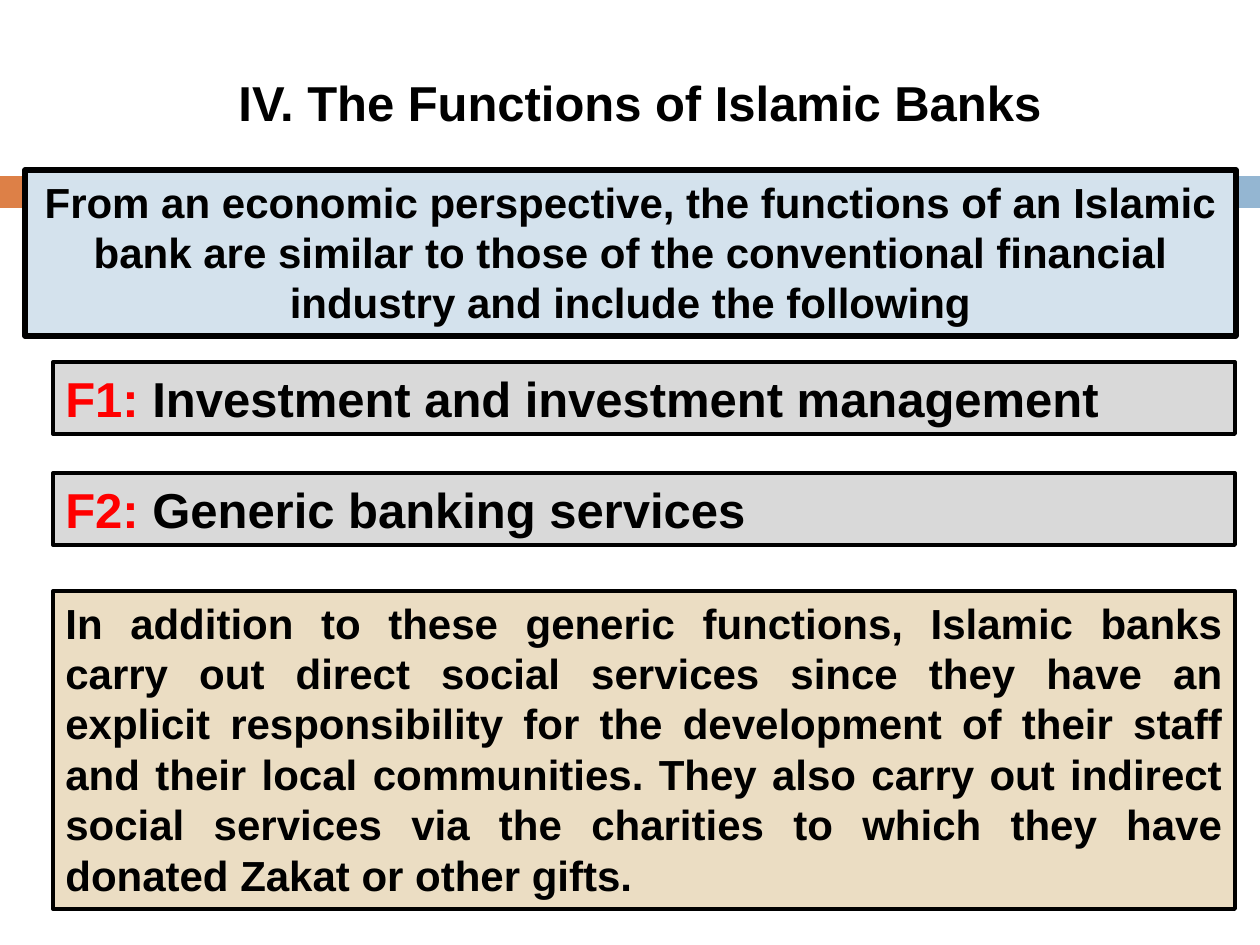
from pptx import Presentation
from pptx.dml.color import RGBColor
from pptx.enum.shapes import MSO_SHAPE
from pptx.enum.text import MSO_ANCHOR, PP_ALIGN
from pptx.util import Emu, Pt

RECTANGLE = MSO_SHAPE.RECTANGLE
TOP, MIDDLE = MSO_ANCHOR.TOP, MSO_ANCHOR.MIDDLE
LEFT, CENTER, JUSTIFY = PP_ALIGN.LEFT, PP_ALIGN.CENTER, PP_ALIGN.JUSTIFY
TITLE_ONLY = 5
EMU_PER_PX = 914400 // 126
BLACK, RED, GRAY = "000000", "FF0000", "D9D9D9"
ORANGE, BLUE, PALE_BLUE, SAND = "DD8047", "94B6D2", "D4E2ED", "EBDDC3"

INTRO = (
    "From an economic perspective, the functions of an Islamic bank are similar "
    "to those of the conventional financial industry and include the following"
)
SOCIAL_ROLE = (
    "In addition to these generic functions, Islamic banks carry out direct social "
    "services since they have an explicit responsibility for the development of "
    "their staff and their local communities. They also carry out indirect social "
    "services via the charities to which they have donated Zakat or other gifts."
)
FUNCTIONS = [
    ("F1: ", "Investment and investment management", 362, JUSTIFY),
    ("F2: ", "Generic banking services", 473, LEFT),
]


def px(length):
    """Turn a length in px into EMU."""
    return Emu(length * EMU_PER_PX)


def color(value):
    """Turn a hex string into a colour."""
    return RGBColor.from_string(value)


def write_text(shape, spans, size, align, anchor):
    """Write bold coloured spans as the one paragraph of a shape."""
    frame = shape.text_frame
    frame.word_wrap = True
    frame.vertical_anchor = anchor
    para = frame.paragraphs[0]
    para.alignment = align
    for text, text_color in spans:
        span = para.add_run()
        span.text = text
        span.font.name = "Arial"
        span.font.size = Pt(size)
        span.font.bold = True
        span.font.color.rgb = color(text_color)


def add_bar(page, bounds, fill):
    """Add a plain filled rectangle."""
    bar = page.shapes.add_shape(RECTANGLE, *map(px, bounds))
    bar.shadow.inherit = False
    bar.fill.solid()
    bar.fill.fore_color.rgb = color(fill)
    bar.line.fill.background()
    return bar


def add_text_box(page, bounds, fill, border, spans, size, align):
    """Add a black-bordered rectangle holding text."""
    box = add_bar(page, bounds, fill)
    box.line.color.rgb = color(BLACK)
    box.line.width = Pt(border)
    write_text(box, spans, size, align, TOP)


def set_title(page, bounds, text):
    """Place and fill the title placeholder."""
    title = page.shapes.title
    title.left, title.top, title.width, title.height = map(px, bounds)
    write_text(title, [(text, BLACK)], 28, CENTER, MIDDLE)


def main():
    """Build and save the slide."""
    deck = Presentation()
    deck.slide_width, deck.slide_height = px(1260), px(945)
    page = deck.slides.add_slide(deck.slide_layouts[TITLE_ONLY])
    add_bar(page, (0, 176, 73, 32), ORANGE)
    add_bar(page, (82, 176, 1178, 32), BLUE)
    set_title(page, (78, 34, 1124, 136), "IV. The Functions of Islamic Banks")
    add_text_box(page, (25, 170, 1211, 166), PALE_BLUE, 3, [(INTRO, BLACK)], 24, CENTER)
    for label, name, top, align in FUNCTIONS:
        spans = [(label, RED), (name, BLACK)]
        add_text_box(page, (53, top, 1182, 72), GRAY, 2.25, spans, 28, align)
    add_text_box(page, (53, 591, 1182, 318), SAND, 2.25, [(SOCIAL_ROLE, BLACK)], 24, JUSTIFY)
    deck.save("out.pptx")


if __name__ == "__main__":
    main()
